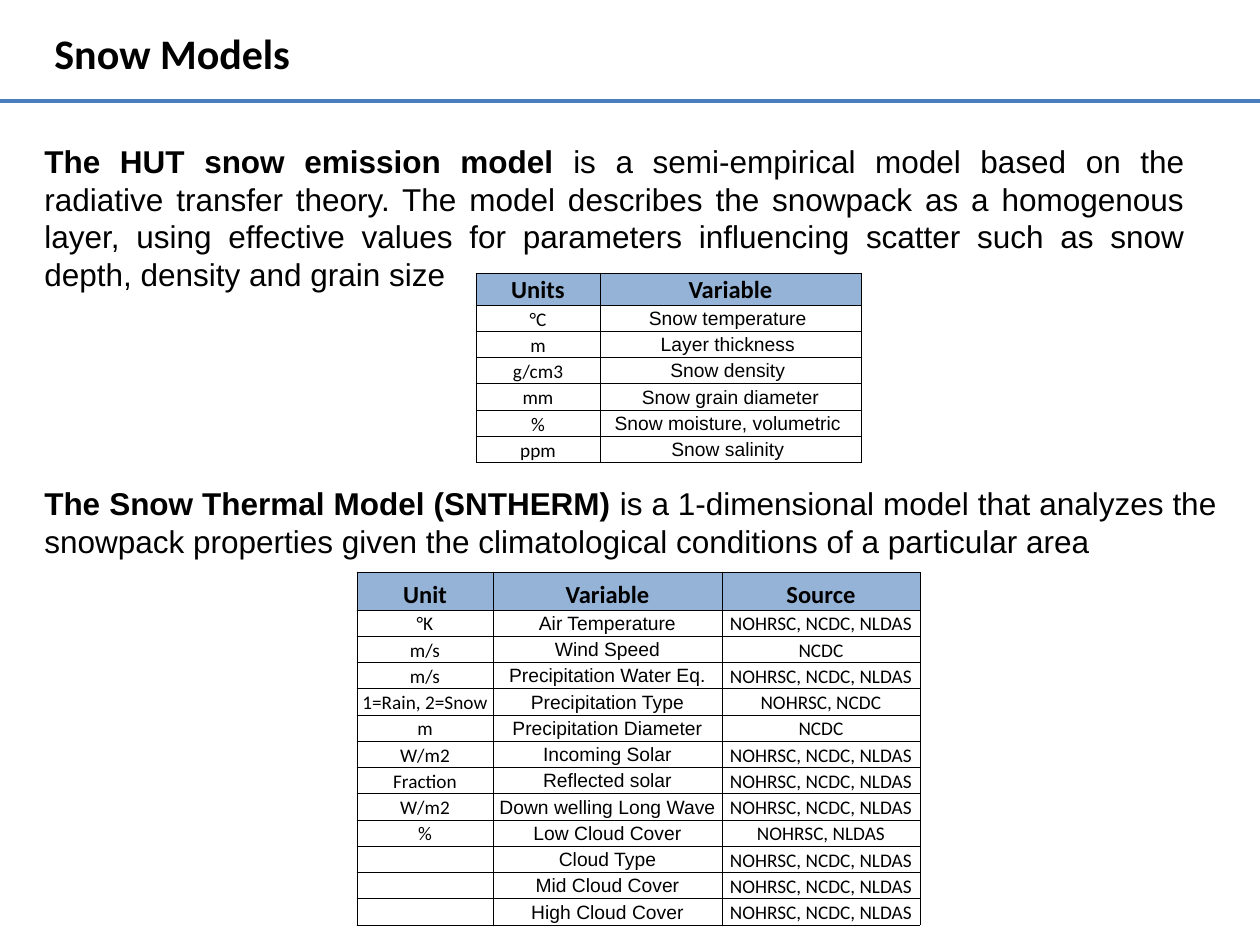
import dataclasses

import lxml.etree
import pptx
import pptx.dml.color
import pptx.enum.shapes
import pptx.enum.text
import pptx.oxml.ns
import pptx.util

qn = pptx.oxml.ns.qn
ALIGN = pptx.enum.text.PP_ALIGN
ANCHOR = pptx.enum.text.MSO_ANCHOR
EMU_PER_PX = 914400 / 126


@dataclasses.dataclass(frozen=True)
class Theme:
    ink: str = "000000"
    rule: str = "4B7EBC"
    header_fill: str = "95B3D7"
    heading_font: str = "Calibri"
    body_font: str = "Arial"
    title_size: int = 24
    body_size: int = 18
    body_leading: float = 21.5
    header_size: int = 14
    cell_size: int = 11
    rule_width: float = 2.25
    border_width: float = 0.5


THEME = Theme()

HUT_MODEL = (
    "The HUT snow emission model ",
    "is a semi-empirical model based on the radiative transfer theory. The model "
    "describes the snowpack as a homogenous layer, using effective values for "
    "parameters influencing scatter such as snow depth, density and grain size",
)
SNTHERM_MODEL = (
    "The Snow Thermal Model (SNTHERM) ",
    "is a 1-dimensional model that analyzes the snowpack properties given the "
    "climatological conditions of a particular area",
)

HUT_INPUTS = [
    ("Units", "Variable"),
    ("°C", "Snow temperature "),
    ("m", "Layer thickness "),
    ("g/cm3", "Snow density "),
    ("mm", "Snow grain diameter"),
    ("%", "Snow moisture, volumetric "),
    ("ppm", "Snow salinity "),
]
ALL_SOURCES = "NOHRSC, NCDC, NLDAS"
SNTHERM_INPUTS = [
    ("Unit", "Variable", "Source"),
    ("°K", "Air Temperature", ALL_SOURCES),
    ("m/s", "Wind Speed", "NCDC"),
    ("m/s", "Precipitation Water Eq.", ALL_SOURCES),
    ("1=Rain, 2=Snow", "Precipitation Type", "NOHRSC, NCDC"),
    ("m", "Precipitation Diameter", "NCDC"),
    ("W/m2", "Incoming Solar", ALL_SOURCES),
    ("Fraction", "Reflected solar", ALL_SOURCES),
    ("W/m2", "Down welling Long Wave", ALL_SOURCES),
    ("%", "Low Cloud Cover", "NOHRSC, NLDAS"),
    ("", "Cloud Type", ALL_SOURCES),
    ("", "Mid Cloud Cover", ALL_SOURCES),
    ("", "High Cloud Cover", ALL_SOURCES),
]


def px(length):
    return pptx.util.Emu(round(length * EMU_PER_PX))


def rgb(color):
    return pptx.dml.color.RGBColor.from_string(color)


def write_text(paragraph, text, *, size, font, bold=False, align=None, leading=None):
    """Append one formatted run; an empty text only sets the paragraph's size."""
    if align is not None:
        paragraph.alignment = align
    if leading is not None:
        paragraph.line_spacing = pptx.util.Pt(leading)
    if not text:
        lxml.etree.SubElement(paragraph._p, qn("a:endParaRPr"), sz=str(size * 100))
        return
    run = paragraph.add_run()
    run.text = text
    run.font.size = pptx.util.Pt(size)
    run.font.name = font
    run.font.bold = bold
    run.font.color.rgb = rgb(THEME.ink)


def add_text_frame(slide, box):
    frame = slide.shapes.add_textbox(*map(px, box)).text_frame
    frame.word_wrap = True
    return frame


def add_title(slide, box, title):
    frame = add_text_frame(slide, box)
    frame.vertical_anchor = ANCHOR.MIDDLE
    write_text(frame.paragraphs[0], title, size=THEME.title_size,
               font=THEME.heading_font, bold=True, align=ALIGN.LEFT)


def add_title_rule(slide, box):
    left, top, width, height = box
    rule = slide.shapes.add_connector(
        pptx.enum.shapes.MSO_CONNECTOR.STRAIGHT,
        px(left), px(top), px(left + width), px(top + height))
    rule.line.color.rgb = rgb(THEME.rule)
    rule.line.width = pptx.util.Pt(THEME.rule_width)
    lxml.etree.SubElement(rule._element.spPr, qn("a:effectLst"))


def add_description(slide, box, name, explanation):
    frame = add_text_frame(slide, box)
    frame.auto_size = pptx.enum.text.MSO_AUTO_SIZE.SHAPE_TO_FIT_TEXT
    for text, bold in ((name, True), (explanation, False)):
        write_text(frame.paragraphs[0], text, size=THEME.body_size, bold=bold,
                   font=THEME.body_font, align=ALIGN.JUSTIFY,
                   leading=THEME.body_leading)


def add_borders(cell):
    properties = cell._tc.get_or_add_tcPr()
    for side in ("lnL", "lnR", "lnT", "lnB"):
        border = lxml.etree.SubElement(
            properties, qn(f"a:{side}"), w=str(pptx.util.Pt(THEME.border_width)))
        fill = lxml.etree.SubElement(border, qn("a:solidFill"))
        lxml.etree.SubElement(fill, qn("a:srgbClr"), val=THEME.ink)


def format_cell(cell, text, is_header, is_variable):
    """Variable names use the body font; headers and other columns the heading font."""
    in_body_font = is_variable and not is_header
    cell.margin_left = cell.margin_right = cell.margin_top = px(1)
    cell.margin_bottom = 0
    cell.vertical_anchor = ANCHOR.MIDDLE if in_body_font else ANCHOR.BOTTOM
    add_borders(cell)
    if is_header:
        cell.fill.solid()
        cell.fill.fore_color.rgb = rgb(THEME.header_fill)
    else:
        cell.fill.background()
    write_text(cell.text_frame.paragraphs[0], text, bold=is_header, align=ALIGN.CENTER,
               size=THEME.header_size if is_header else THEME.cell_size,
               font=THEME.body_font if in_body_font else THEME.heading_font)


def add_inputs_table(slide, box, rows, column_widths, header_height):
    table = slide.shapes.add_table(len(rows), len(rows[0]), *map(px, box)).table
    row_height = (box[3] - header_height) / (len(rows) - 1)
    for column, width in zip(table.columns, column_widths):
        column.width = px(width)
    for r, texts in enumerate(rows):
        table.rows[r].height = px(row_height if r else header_height)
        for c, text in enumerate(texts):
            format_cell(table.cell(r, c), text, is_header=r == 0, is_variable=c == 1)


def main():
    presentation = pptx.Presentation()
    presentation.slide_width, presentation.slide_height = px(1260), px(945)
    slide = presentation.slides.add_slide(presentation.slide_layouts[6])

    add_title_rule(slide, (0, 101, 1260, 0))
    add_inputs_table(slide, (476, 273, 385, 190), HUT_INPUTS, (124, 261), 32)
    add_inputs_table(slide, (357, 572, 563, 353), SNTHERM_INPUTS, (136, 229, 198), 38)
    add_description(slide, (32, 478, 1197, 89), *SNTHERM_MODEL)
    add_description(slide, (32, 136, 1165, 127), *HUT_MODEL)
    add_title(slide, (42, 21, 1040, 63), "Snow Models")

    presentation.save("out.pptx")


if __name__ == "__main__":
    main()
